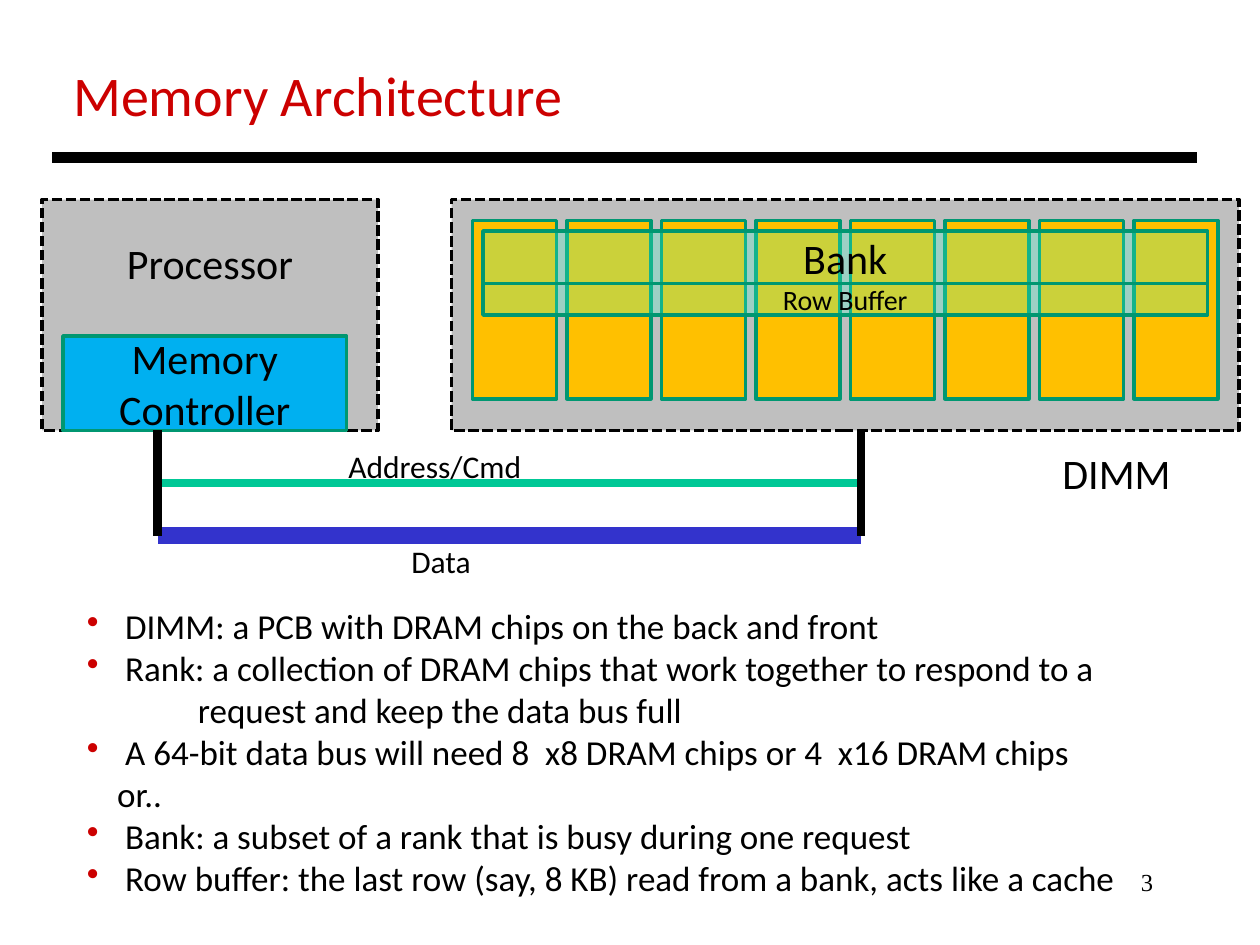
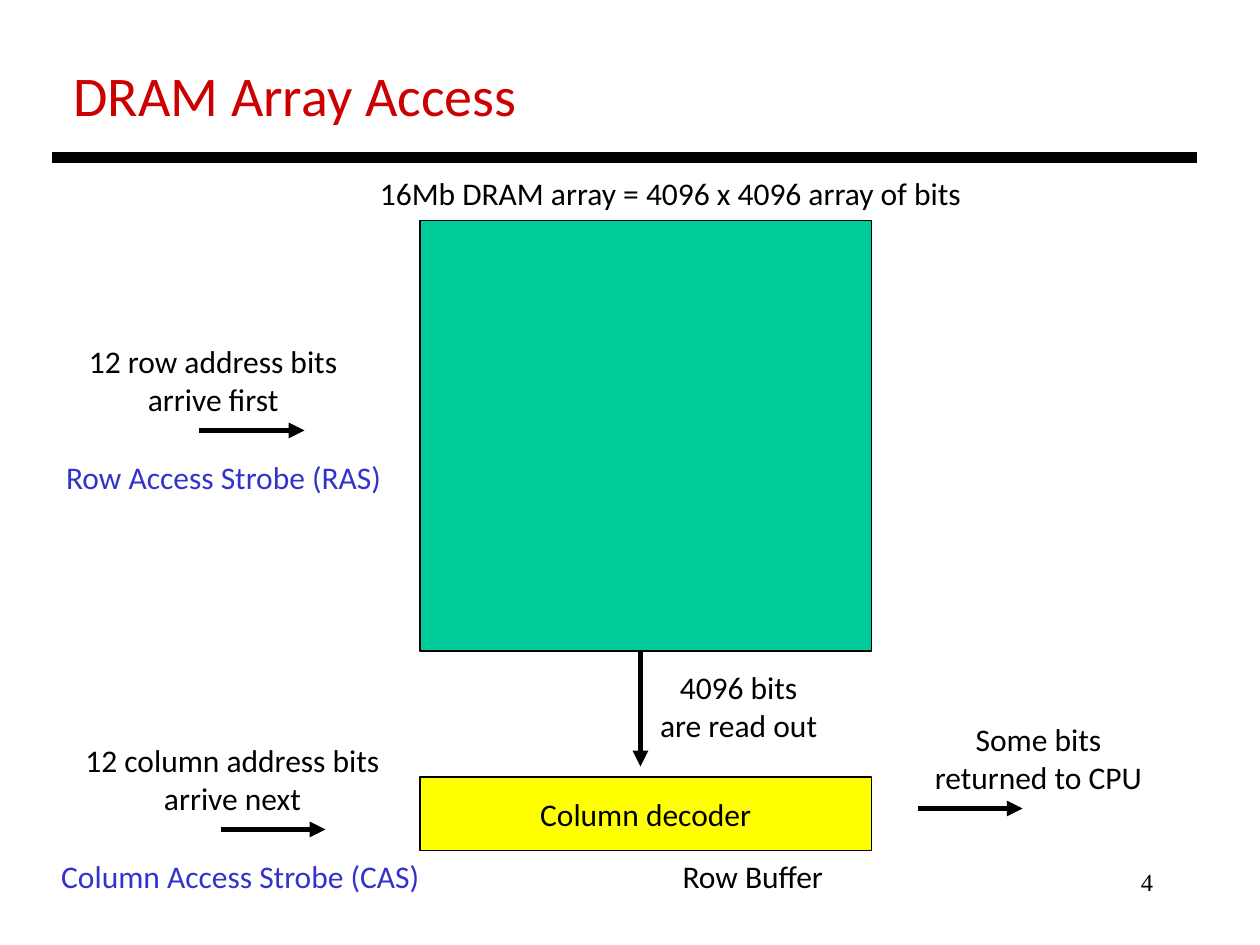
from lxml import etree
from pptx import Presentation
from pptx.dml.color import RGBColor
from pptx.enum.dml import MSO_LINE
from pptx.enum.shapes import MSO_CONNECTOR, MSO_SHAPE
from pptx.enum.text import MSO_ANCHOR, MSO_AUTO_SIZE, PP_ALIGN
from pptx.oxml.ns import qn
from pptx.util import Inches, Pt

RECT, STRAIGHT, DASH = MSO_SHAPE.RECTANGLE, MSO_CONNECTOR.STRAIGHT, MSO_LINE.SQUARE_DOT
LEFT, CENTER, RIGHT = PP_ALIGN.LEFT, PP_ALIGN.CENTER, PP_ALIGN.RIGHT
TOP, MIDDLE, GROW = MSO_ANCHOR.TOP, MSO_ANCHOR.MIDDLE, MSO_AUTO_SIZE.SHAPE_TO_FIT_TEXT

COLORS = {
    "black": "000000", "red": "CC0000", "blue": "3333CC", "green": "00CC99",
    "address": "00C896", "edge": "009771", "grey": "BFBFBF", "sky": "00B0F0",
    "amber": "FFC000", "mint": "47FFD1", "yellow": "FFFF00",
}
BODY, NUMBER_FONT = "Calibri", "Times New Roman"
CELL = 1 / 12  # grid step in inches; all lengths below count grid steps

# ---- Content: Memory Architecture ----
CHIP_COUNT, CHIP_PITCH = 8, 9
FIRST_CHIP = (45, 21, 8, 17)
PACKAGE = {"fill": "grey", "edge": "black", "dash": DASH}
# (box, text, size, format)
MEMORY_BLOCKS = [
    ((4, 19, 32, 22), "Processor", 24, {**PACKAGE, "anchor": TOP, "inset": 3.6}),
    ((6, 32, 27, 9), "Memory Controller", 24, {"fill": "sky"}),
    ((43, 19, 75, 22), "", 24, PACKAGE),
    *[((FIRST_CHIP[0] + i * CHIP_PITCH, *FIRST_CHIP[1:]), "", 24, {"fill": "amber"})
      for i in range(CHIP_COUNT)],
    ((46, 22, 69, 5), "Bank", 24, {"fill": "mint", "opacity": 28}),
    ((46, 27, 69, 3), "Row Buffer", 16, {"fill": "mint", "opacity": 28}),
]
CONTROLLER_X, DIMM_X = 15, 82
# (x1, y1, x2, y2, colour, width)
BUSES = [
    (CONTROLLER_X, 46, DIMM_X, 46, "address", 5),
    (CONTROLLER_X, 51, DIMM_X, 51, "blue", 10),
    (CONTROLLER_X, 41, CONTROLLER_X, 51, "black", 5),
    (DIMM_X, 41, DIMM_X, 51, "black", 5),
]
# (left, top, width, lines, format)
MEMORY_LABELS = [
    (32, 42, 19.1, ["Address/Cmd"], {}),
    (38, 51, 8.2, ["Data"], {}),
    (100, 42, 13.2, ["DIMM"], {"size": 24}),
]
# (text, has a bullet)
DEFINITIONS = [
    (" DIMM: a PCB with DRAM chips on the back and front", True),
    (" Rank: a collection of DRAM chips that work together to respond to a", True),
    ("request and keep the data bus full", False),
    (" A 64-bit data bus will need 8  x8 DRAM chips or 4  x16 DRAM chips or..", True),
    (" Bank: a subset of a rank that is busy during one request", True),
    (" Row buffer: the last row (say, 8 KB) read from a bank, acts like a cache", True),
]
HANGING, CONTINUED = 0.24, 0.88  # inches

# ---- Content: DRAM Array Access ----
THIN = {"edge": "black", "weight": 0.75}
ARRAY_BLOCKS = [
    ((40, 21, 43, 41), "", 18, {**THIN, "fill": "green"}),
    ((40, 74, 43, 7), "Column decoder", 18, {**THIN, "fill": "yellow"}),
]
ARROWS = [(19, 41, 29, 41), (21, 79, 31, 79), (87.4, 77, 97.4, 77), (61, 62, 61, 73)]
MID, STROBE = {"align": CENTER}, {"align": CENTER, "color": "blue"}
ARRAY_LABELS = [
    (35, 16, 58.4, ["16Mb DRAM array = 4096 x 4096 array of bits"], {}),
    (7.1, 32, 26.4, ["12 row address bits", "arrive first"], MID),
    (6.8, 70, 30.7, ["12 column address bits", "arrive next"], MID),
    (87.7, 68, 22.4, ["Some bits", "returned to CPU"], MID),
    (61.6, 63, 17.5, ["4096 bits", "are read out"], MID),
    (4.9, 43, 32.8, ["Row Access Strobe (RAS)"], STROBE),
    (4.4, 81, 37, ["Column Access Strobe (CAS)"], STROBE),
    (63.7, 81, 16, ["Row Buffer"], MID),
]


def grid(*steps):
    return [Inches(step * CELL) for step in steps]


def rgb(name):
    return RGBColor.from_string(COLORS[name])


def set_all(target, values):
    for key, value in values.items():
        setattr(target, key, value)


def write(frame, lines, size, color="black", font=BODY, align=LEFT):
    """Fill a text frame with one paragraph per line."""
    for i, line in enumerate(lines):
        paragraph = frame.paragraphs[0] if i == 0 else frame.add_paragraph()
        paragraph.alignment = align
        run = paragraph.add_run()
        run.text = line
        set_all(run.font, {"size": Pt(size), "name": font})
        run.font.color.rgb = rgb(color)


def add_label(slide, left, top, width, lines, size=18, wrap=False, **style):
    height = (0.1 + len(lines) * size * 1.22 / 72) / CELL
    frame = slide.shapes.add_textbox(*grid(left, top, width, height)).text_frame
    set_all(frame, {"word_wrap": wrap, "auto_size": GROW})
    write(frame, lines, size, **style)
    return frame


def add_block(slide, box, text, size, fill, edge="edge", weight=2, dash=None,
              opacity=None, anchor=MIDDLE, inset=0.6):
    block = slide.shapes.add_shape(RECT, *grid(*box))
    block.shadow.inherit = False
    block.fill.solid()
    block.fill.fore_color.rgb = rgb(fill)
    if opacity:
        tint = block.fill._xPr.find(qn("a:solidFill"))[0]
        etree.SubElement(tint, qn("a:alpha")).set("val", str(opacity * 1000))
    block.line.color.rgb = rgb(edge)
    set_all(block.line, {"width": Pt(weight), "dash_style": dash})
    if text:
        set_all(block.text_frame, {"word_wrap": True, "vertical_anchor": anchor,
                                   "margin_top": grid(inset)[0]})
        write(block.text_frame, [text], size, align=CENTER)


def add_line(slide, x1, y1, x2, y2, color="black", weight=3, arrow=False):
    connector = slide.shapes.add_connector(STRAIGHT, *grid(x1, y1, x2, y2))
    connector.line.color.rgb = rgb(color)
    connector.line.width = Pt(weight)
    if arrow:
        etree.SubElement(connector.line._get_or_add_ln(), qn("a:tailEnd")).set("type", "triangle")
    etree.SubElement(connector._element.spPr, qn("a:effectLst"))


def add_definitions(slide):
    texts = [text for text, _ in DEFINITIONS]
    frame = add_label(slide, 7.1, 57, 100.5, texts, size=20, wrap=True)
    for paragraph, (_, bulleted) in zip(frame.paragraphs, DEFINITIONS):
        props = paragraph._p.get_or_add_pPr()
        props.set("marL", str(Inches(HANGING if bulleted else CONTINUED)))
        props.set("indent", str(-Inches(HANGING) if bulleted else 0))
        if bulleted:
            tint = etree.SubElement(props, qn("a:buClr"))
            etree.SubElement(tint, qn("a:srgbClr")).set("val", COLORS["red"])
            etree.SubElement(props, qn("a:buChar")).set("char", "•")


def start_slide(deck, title, title_width, number):
    """Page number, title and rule shared by every slide."""
    slide = deck.slides.add_slide(deck.slide_layouts[6])
    add_label(slide, 86, 82, 25, [number], size=14, wrap=True, font=NUMBER_FONT, align=RIGHT)
    add_label(slide, 5.8, 5.2, title_width, [title], size=32, color="red")
    add_line(slide, 5, 15, 114, 15, weight=6)
    return slide


def main():
    deck = Presentation()
    set_all(deck, {"slide_width": Inches(10), "slide_height": Inches(7.5)})

    # Memory Architecture
    memory = start_slide(deck, "Memory Architecture", 49.4, "3")
    for box, text, size, style in MEMORY_BLOCKS:
        add_block(memory, box, text, size, **style)
    for bus in BUSES:
        add_line(memory, *bus)
    for *place, style in MEMORY_LABELS:
        add_label(memory, *place, **style)
    add_definitions(memory)

    # DRAM Array Access
    access = start_slide(deck, "DRAM Array Access", 45, "4")
    for box, text, size, style in ARRAY_BLOCKS:
        add_block(access, box, text, size, **style)
    for arrow in ARROWS:
        add_line(access, *arrow, arrow=True)
    for *place, style in ARRAY_LABELS:
        add_label(access, *place, **style)

    deck.save("out.pptx")


if __name__ == "__main__":
    main()
